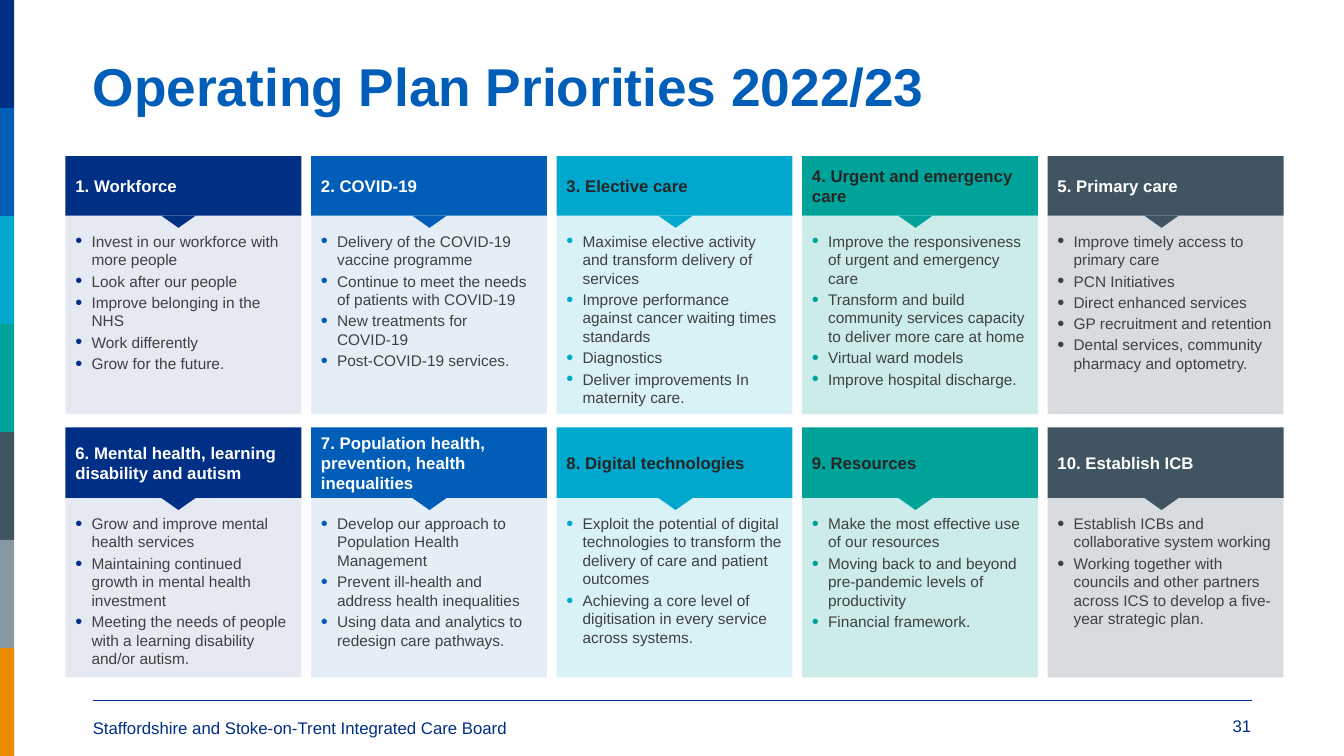
from collections import namedtuple

from lxml.etree import SubElement
from pptx import Presentation
from pptx.dml.color import RGBColor
from pptx.enum.shapes import MSO_CONNECTOR, MSO_SHAPE
from pptx.enum.text import MSO_ANCHOR, MSO_AUTO_SIZE, PP_ALIGN
from pptx.oxml.ns import qn
from pptx.util import Inches, Pt

NAVY = RGBColor(0x00, 0x2F, 0x86)
BLUE = RGBColor(0x00, 0x5E, 0xB8)
CYAN = RGBColor(0x00, 0xA8, 0xCE)
TEAL = RGBColor(0x00, 0xA3, 0x99)
SLATE = RGBColor(0x41, 0x54, 0x62)
GREY = RGBColor(0x88, 0x98, 0xA3)
ORANGE = RGBColor(0xEC, 0x8A, 0x00)
WHITE = RGBColor(0xFF, 0xFF, 0xFF)
DARK = RGBColor(0x26, 0x26, 0x26)
BODY = RGBColor(0x40, 0x40, 0x40)

SLIDE_WIDTH, SLIDE_HEIGHT = 13.33, 7.5
STRIPES = [NAVY, BLUE, CYAN, TEAL, SLATE, GREY, ORANGE]
CARD_LEFT, CARD_PITCH, CARD_WIDTH = 0.65, 2.435, 2.34
POINTER_WIDTH, POINTER_HEIGHT = 0.34, 0.12

Theme = namedtuple("Theme", "colour heading bullet opacity pointer_left")
Row = namedtuple("Row", "top header_height panel_height cards")

THEMES = [
    Theme(NAVY, WHITE, NAVY, 10, 1.6),
    Theme(BLUE, WHITE, BLUE, 10, 4.09),
    Theme(CYAN, DARK, CYAN, 15, 6.53),
    Theme(TEAL, DARK, TEAL, 20, 8.91),
    Theme(SLATE, WHITE, BODY, 20, 11.35),
]

ROWS = [
    Row(1.55, 0.59, 1.97, [
        ("1. Workforce", [
            "Invest in our workforce with more people",
            "Look after our people",
            "Improve belonging in the NHS",
            "Work differently",
            "Grow for the future."]),
        ("2. COVID-19", [
            "Delivery of the COVID-19 vaccine programme",
            "Continue to meet the needs of patients with COVID-19",
            "New treatments for COVID-19",
            "Post-COVID-19 services."]),
        ("3. Elective care", [
            "Maximise elective activity and transform delivery of services",
            "Improve performance against cancer waiting times standards",
            "Diagnostics",
            "Deliver improvements In maternity care."]),
        ("4. Urgent and emergency care", [
            "Improve the responsiveness of urgent and emergency care",
            "Transform and build community services capacity to deliver more care at home",
            "Virtual ward models",
            "Improve hospital discharge."]),
        ("5. Primary care", [
            "Improve timely access to primary care",
            "PCN Initiatives",
            "Direct enhanced services",
            "GP recruitment and retention",
            "Dental services, community pharmacy and optometry."]),
    ]),
    Row(4.24, 0.7, 1.78, [
        ("6. Mental health, learning disability and autism", [
            "Grow and improve mental health services",
            "Maintaining continued growth in mental health investment",
            "Meeting the needs of people with a learning disability and/or autism."]),
        ("7. Population health, prevention, health inequalities", [
            "Develop our approach to Population Health Management",
            "Prevent ill-health and address health inequalities",
            "Using data and analytics to redesign care pathways."]),
        ("8. Digital technologies", [
            "Exploit the potential of digital technologies to transform the delivery of care and patient outcomes",
            "Achieving a core level of digitisation in every service across systems."]),
        ("9. Resources", [
            "Make the most effective use of our resources",
            "Moving back to and beyond pre-pandemic levels of productivity",
            "Financial framework."]),
        ("10. Establish ICB", [
            "Establish ICBs and collaborative system working",
            "Working together with councils and other partners across ICS to develop a five-year strategic plan."]),
    ]),
]


def write(para, text, font="Arial", size=12, colour=BODY, bold=False, align=PP_ALIGN.LEFT):
    para.alignment = align
    span = para.add_run()
    span.text = text
    span.font.name = font
    span.font.size = Pt(size)
    span.font.color.rgb = colour
    span.font.bold = bold


class SlideBuilder:
    def __init__(self, page, font="Arial"):
        self.page = page
        self.font = font

    def frame(self, box, margins, anchor=MSO_ANCHOR.TOP):
        frame = box.text_frame
        frame.word_wrap = True
        frame.auto_size = MSO_AUTO_SIZE.NONE
        frame.vertical_anchor = anchor
        (frame.margin_left, frame.margin_top,
         frame.margin_right, frame.margin_bottom) = map(Inches, margins)
        return frame

    def shape(self, kind, left, top, width, height, colour, opacity=100):
        box = self.page.shapes.add_shape(kind, *map(Inches, (left, top, width, height)))
        box.shadow.inherit = False
        box.fill.solid()
        box.fill.fore_color.rgb = colour
        box.line.fill.background()
        if opacity < 100:
            fill = box._element.spPr.find(qn("a:solidFill"))
            SubElement(fill[0], qn("a:alpha"), val=str(opacity * 1000))
        return box

    def title(self, text):
        box = self.page.shapes.title
        box.left, box.top, box.width, box.height = map(Inches, (0.92, 0.54, 11.5, 0.7))
        para = self.frame(box, (0, 0, 0, 0), MSO_ANCHOR.MIDDLE).paragraphs[0]
        para.line_spacing = 0.9
        write(para, text, font=self.font, size=38, colour=BLUE, bold=True)

    def rule(self, left, right, top):
        line = self.page.shapes.add_connector(
            MSO_CONNECTOR.STRAIGHT, *map(Inches, (left, top, right, top)))
        line.line.color.rgb = NAVY
        line.line.width = Pt(1)
        SubElement(line._element.spPr, qn("a:effectLst"))

    def label(self, text, left, top, width, align):
        box = self.page.shapes.add_textbox(*map(Inches, (left, top, width, 0.3)))
        para = self.frame(box, (0, 0.05, 0, 0.05)).paragraphs[0]
        write(para, text, font=self.font, colour=NAVY, align=align)

    def header(self, text, left, top, height, theme):
        box = self.shape(MSO_SHAPE.ROUNDED_RECTANGLE, left, top, CARD_WIDTH, height, theme.colour)
        box.adjustments[0] = 0
        frame = self.frame(box, (0.1, 0.05, 0.1, 0.05), MSO_ANCHOR.MIDDLE)
        write(frame.paragraphs[0], text, font=self.font, colour=theme.heading, bold=True)

    def pointer(self, top, theme):
        box = self.shape(MSO_SHAPE.ISOSCELES_TRIANGLE, theme.pointer_left, top,
                         POINTER_WIDTH, POINTER_HEIGHT, theme.colour)
        box.rotation = 180

    def panel(self, items, left, top, height, theme):
        box = self.shape(MSO_SHAPE.RECTANGLE, left, top, CARD_WIDTH, height,
                         theme.colour, theme.opacity)
        frame = self.frame(box, (0.1, 0.16, 0.1, 0.05))
        for index, item in enumerate(items):
            para = frame.add_paragraph() if index else frame.paragraphs[0]
            self.bullet(para, theme.bullet)
            write(para, item, font=self.font, size=11)

    def bullet(self, para, colour):
        para.space_after = Pt(2)
        properties = para._p.get_or_add_pPr()
        properties.set("marL", str(Inches(0.16)))
        properties.set("indent", str(-Inches(0.16)))
        tint = SubElement(properties, qn("a:buClr"))
        SubElement(tint, qn("a:srgbClr"), val=str(colour))
        SubElement(properties, qn("a:buSzPct"), val="130000")
        SubElement(properties, qn("a:buFont"), typeface=self.font)
        SubElement(properties, qn("a:buChar"), char="•")


def main():
    deck = Presentation()
    deck.slide_width, deck.slide_height = Inches(SLIDE_WIDTH), Inches(SLIDE_HEIGHT)
    page = deck.slides.add_slide(deck.slide_layouts[5])
    builder = SlideBuilder(page)

    builder.rule(0.92, 12.42, 6.95)
    stripe_height = SLIDE_HEIGHT / len(STRIPES)
    for index, colour in enumerate(STRIPES):
        builder.shape(MSO_SHAPE.RECTANGLE, 0, index * stripe_height, 0.14, stripe_height, colour)
    builder.title("Operating Plan Priorities 2022/23")

    for row in ROWS:
        panel_top = row.top + row.header_height
        for column, (theme, (heading, items)) in enumerate(zip(THEMES, row.cards)):
            left = CARD_LEFT + column * CARD_PITCH
            builder.header(heading, left, row.top, row.header_height, theme)
            builder.pointer(panel_top, theme)
            builder.panel(items, left, panel_top, row.panel_height, theme)

    builder.label("Staffordshire and Stoke-on-Trent Integrated Care Board",
                  0.92, 7.07, 8.01, PP_ALIGN.LEFT)
    builder.label("31", 10.42, 7.05, 1.99, PP_ALIGN.RIGHT)
    deck.save("out.pptx")


if __name__ == "__main__":
    main()
